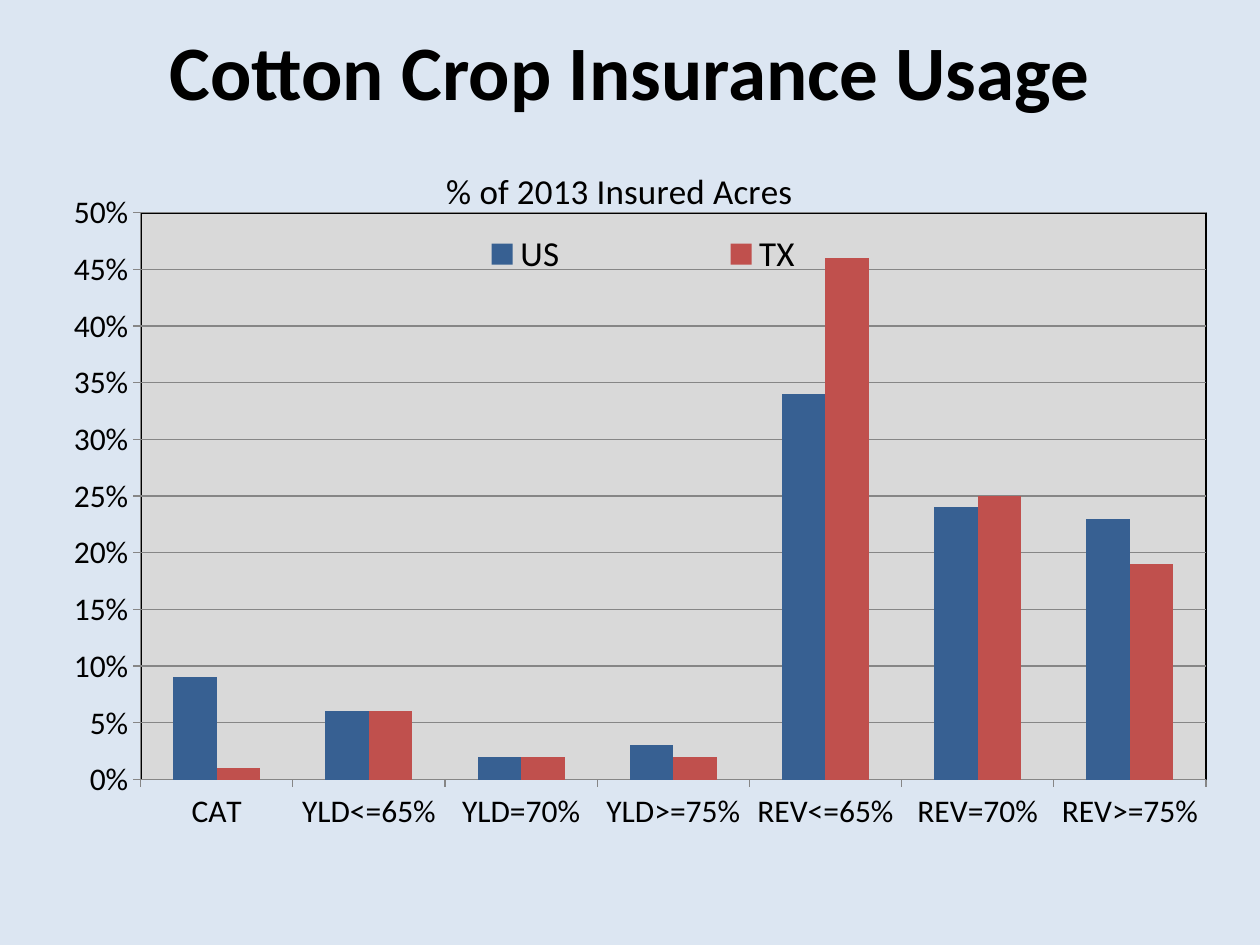
from pptx import Presentation
from pptx.chart.data import CategoryChartData
from pptx.dml.color import RGBColor
from pptx.enum.chart import XL_CHART_TYPE as ChartType, XL_LEGEND_POSITION as LegendPos
from pptx.enum.chart import XL_TICK_MARK as Tick
from pptx.enum.text import MSO_ANCHOR as Anchor, PP_ALIGN as Align
from pptx.oxml import parse_xml
from pptx.oxml.ns import nsdecls
from pptx.util import Pt

BLACK = RGBColor(0x00, 0x00, 0x00)
PALE_BLUE = RGBColor(0xDC, 0xE6, 0xF2)
GRAY = RGBColor(0x86, 0x86, 0x86)
BLUE = RGBColor(0x37, 0x60, 0x92)
RED = RGBColor(0xC0, 0x50, 0x4D)
FONT = "Calibri"


def layout(x, y, w=None, h=None, inner=False):
    """Manual chart layout, in fractions of the chart area."""
    target = '<c:layoutTarget val="inner"/>' if inner else ""
    modes = '<c:xMode val="edge"/><c:yMode val="edge"/>'
    sizes = "".join(f'<c:{k} val="{v}"/>' for k, v in zip("xywh", (x, y, w, h))
                    if v is not None)
    return parse_xml(f'<c:layout {nsdecls("c")}><c:manualLayout>{target}{modes}{sizes}'
                     '</c:manualLayout></c:layout>')


def place(parent, new, after):
    """Put a layout in parent, after the child of the given tag (None: first)."""
    for old in parent.findall(new.tag):
        parent.remove(old)
    if after is None:
        parent.insert(0, new)
    else:
        parent.find(new.tag.replace("layout", after)).addnext(new)


prs = Presentation()
prs.slide_width, prs.slide_height = Pt(720), Pt(540)
s = prs.slides.add_slide(prs.slide_layouts[6])
s.background.fill.solid()
s.background.fill.fore_color.rgb = PALE_BLUE

# Title
tf = s.shapes.add_textbox(Pt(12), Pt(6), Pt(696), Pt(68)).text_frame
tf.word_wrap = True
tf.vertical_anchor = Anchor.MIDDLE
p = tf.paragraphs[0]
p.text = "Cotton Crop Insurance Usage"
p.alignment = Align.CENTER
p.font.name, p.font.size, p.font.bold = FONT, Pt(44), True
p.font.color.rgb = BLACK

# Chart data
data = CategoryChartData(number_format="0%")
data.categories = ["CAT", "YLD<=65%", "YLD=70%", "YLD>=75%",
                   "REV<=65%", "REV=70%", "REV>=75%"]
data.add_series("US", [0.09, 0.06, 0.02, 0.03, 0.34, 0.24, 0.23])
data.add_series("TX", [0.01, 0.06, 0.02, 0.02, 0.46, 0.25, 0.19])
chart = s.shapes.add_chart(ChartType.COLUMN_CLUSTERED, Pt(12), Pt(74),
                           Pt(684), Pt(432), data).chart
chart.font.name, chart.font.size = FONT, Pt(18)
chart.font.color.rgb = BLACK

# Columns
plot = chart.plots[0]
plot.gap_width, plot.overlap = 150, 0
plot.vary_by_categories = False
for series, color in zip(plot.series, (BLUE, RED)):
    series.format.fill.solid()
    series.format.fill.fore_color.rgb = color

# Axes
val_axis, cat_axis = chart.value_axis, chart.category_axis
val_axis.minimum_scale, val_axis.maximum_scale, val_axis.major_unit = 0, 0.5, 0.05
val_axis.tick_labels.number_format = "0%"
val_axis.tick_labels.number_format_is_linked = False
val_axis.has_major_gridlines = True
for axis in (val_axis, cat_axis):
    axis.major_tick_mark = Tick.OUTSIDE
    axis.tick_labels.font.size = Pt(18)
for part in (val_axis, cat_axis, val_axis.major_gridlines):
    part.format.line.color.rgb = GRAY
    part.format.line.width = Pt(0.75)

# Chart title
chart.has_title = True
title = chart.chart_title
title.include_in_layout = True
p = title.text_frame.paragraphs[0]
p.text = "% of 2013 Insured Acres"
p.font.name, p.font.size, p.font.bold = FONT, Pt(20), False
p.font.color.rgb = BLACK
place(title._element, layout(0.35, 0.04), "tx")

# Legend, laid out in one row over the plot
chart.has_legend = True
legend = chart.legend
legend.position = LegendPos.RIGHT
legend.include_in_layout = True
legend.font.name, legend.font.size = FONT, Pt(20)
legend.font.color.rgb = BLACK
place(legend._element, layout(0.26, 0.12, 0.52, 0.09), "legendPos")

# Plot area: place, gray fill and black outline
area = plot._element.getparent()
place(area, layout(0.1, 0.11, 0.89, 0.75, inner=True), None)
area.append(parse_xml(
    f'<c:spPr {nsdecls("c", "a")}><a:solidFill><a:srgbClr val="D9D9D9"/></a:solidFill>'
    '<a:ln w="12700"><a:solidFill><a:srgbClr val="000000"/></a:solidFill></a:ln></c:spPr>'))

prs.save("out.pptx")
